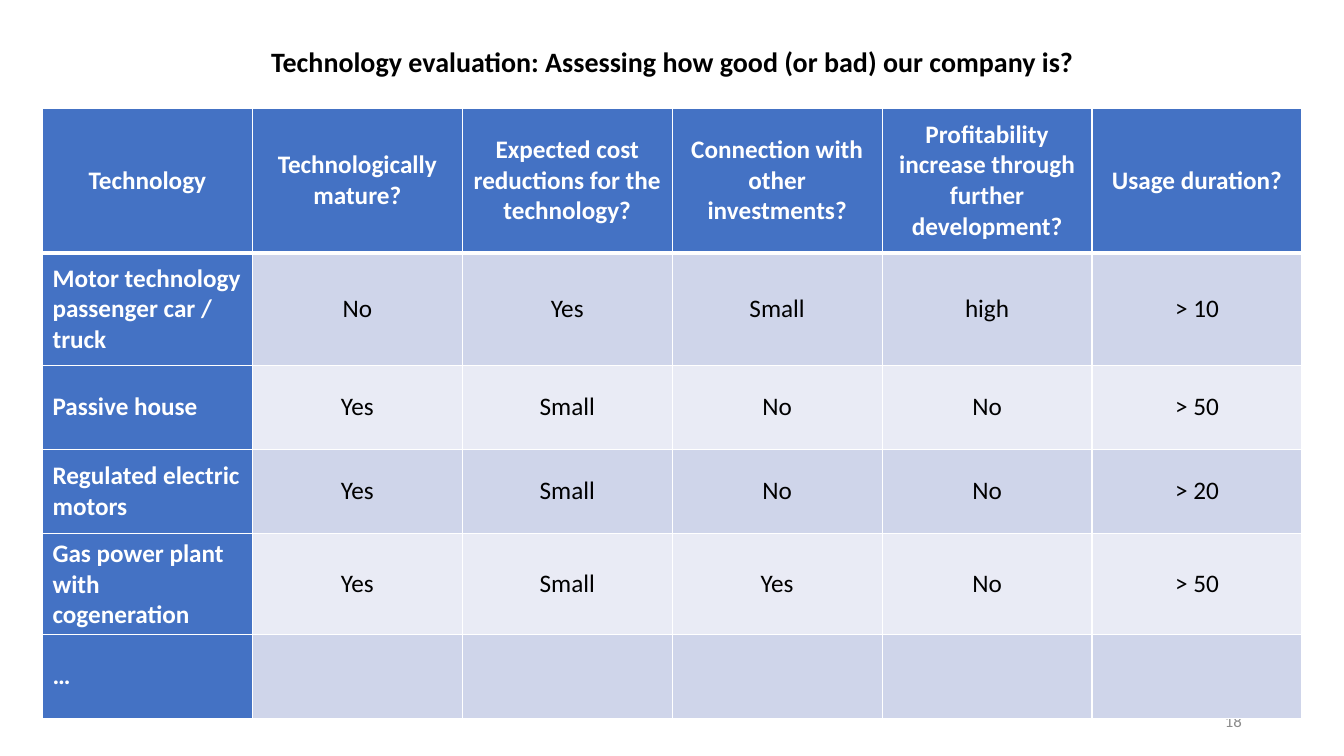
from pptx import Presentation
from pptx.dml.color import RGBColor
from pptx.enum.text import MSO_ANCHOR as Anchor, PP_ALIGN as Align
from pptx.oxml import parse_xml
from pptx.oxml.ns import nsdecls
from pptx.util import Cm, Pt

WHITE = RGBColor(0xFF, 0xFF, 0xFF)
BLACK = RGBColor(0x00, 0x00, 0x00)
GREY = RGBColor(0x8C, 0x8C, 0x8C)
BLUE = RGBColor(0x44, 0x72, 0xC4)
BANDS = [RGBColor(0xCF, 0xD5, 0xEA), RGBColor(0xE9, 0xEB, 0xF5)]

HEADS = [
    "Technology",
    "Technologically mature?",
    "Expected cost reductions for the technology?",
    "Connection with other investments?",
    "Profitability increase through further development?",
    "Usage duration?",
]
ROWS = [
    HEADS,
    ["Motor technology passenger car / truck", "No", "Yes", "Small", "high", "> 10"],
    ["Passive house", "Yes", "Small", "No", "No", "> 50"],
    ["Regulated electric motors", "Yes", "Small", "No", "No", "> 20"],
    ["Gas power plant with cogeneration", "Yes", "Small", "Yes", "No", "> 50"],
    ["…", "", "", "", "", ""],
]
TALL = [3.66, 2.82] + [2.12] * 4
WIDE = 5.29


def write(frame, text, size, color, bold, align):
    frame.word_wrap = True
    frame.vertical_anchor = Anchor.MIDDLE
    para = frame.paragraphs[0]
    para.alignment = align
    run = para.add_run()
    run.text = text
    font = run.font
    font.name, font.size, font.bold = "Calibri", Pt(size), bold
    font.color.rgb = color


def edge(cell, side, width):
    cell._tc.get_or_add_tcPr().append(parse_xml(
        f'<a:ln{side} {nsdecls("a")} w="{Pt(width)}"><a:solidFill>'
        f'<a:srgbClr val="{WHITE}"/></a:solidFill></a:ln{side}>'))


deck = Presentation()
deck.slide_width, deck.slide_height = Cm(33.87), Cm(19.05)
slide = deck.slides.add_slide(deck.slide_layouts[5])

# Title
title = slide.shapes.title
title.left, title.top = Cm(6.38), Cm(0.5)
title.width, title.height = Cm(21.13), Cm(2.19)
write(title.text_frame, HEADS[0] + " evaluation: Assessing how good (or bad) our company is?",
      20, BLACK, True, Align.CENTER)
title.text_frame.paragraphs[0].line_spacing = 0.9

# Page number, partly under the table
page = slide.shapes.add_textbox(Cm(23.93), Cm(17.65), Cm(7.62), Cm(1.02))
write(page.text_frame, "18", 12, GREY, False, Align.RIGHT)

# Table
grid = slide.shapes.add_table(len(ROWS), len(HEADS), Cm(1.07), Cm(2.72),
                              Cm(WIDE * len(HEADS)), Cm(sum(TALL))).table
grid.first_col = True
for col in grid.columns:
    col.width = Cm(WIDE)

for r, row in enumerate(ROWS):
    grid.rows[r].height = Cm(TALL[r])
    for c, text in enumerate(row):
        cell = grid.cell(r, c)
        head = r == 0 or c == 0
        # Borders: thick line under the header row
        for side in "LRTB":
            thick = (r, side) in [(0, "B"), (1, "T")]
            edge(cell, side, 3 if thick else 1)
        cell.fill.solid()
        cell.fill.fore_color.rgb = BLUE if head else BANDS[(r - 1) % 2]
        cell.vertical_anchor = Anchor.MIDDLE
        if text:
            align = Align.LEFT if c == 0 and r > 0 else Align.CENTER
            write(cell.text_frame, text, 18, WHITE if head else BLACK, head, align)

deck.save("out.pptx")
